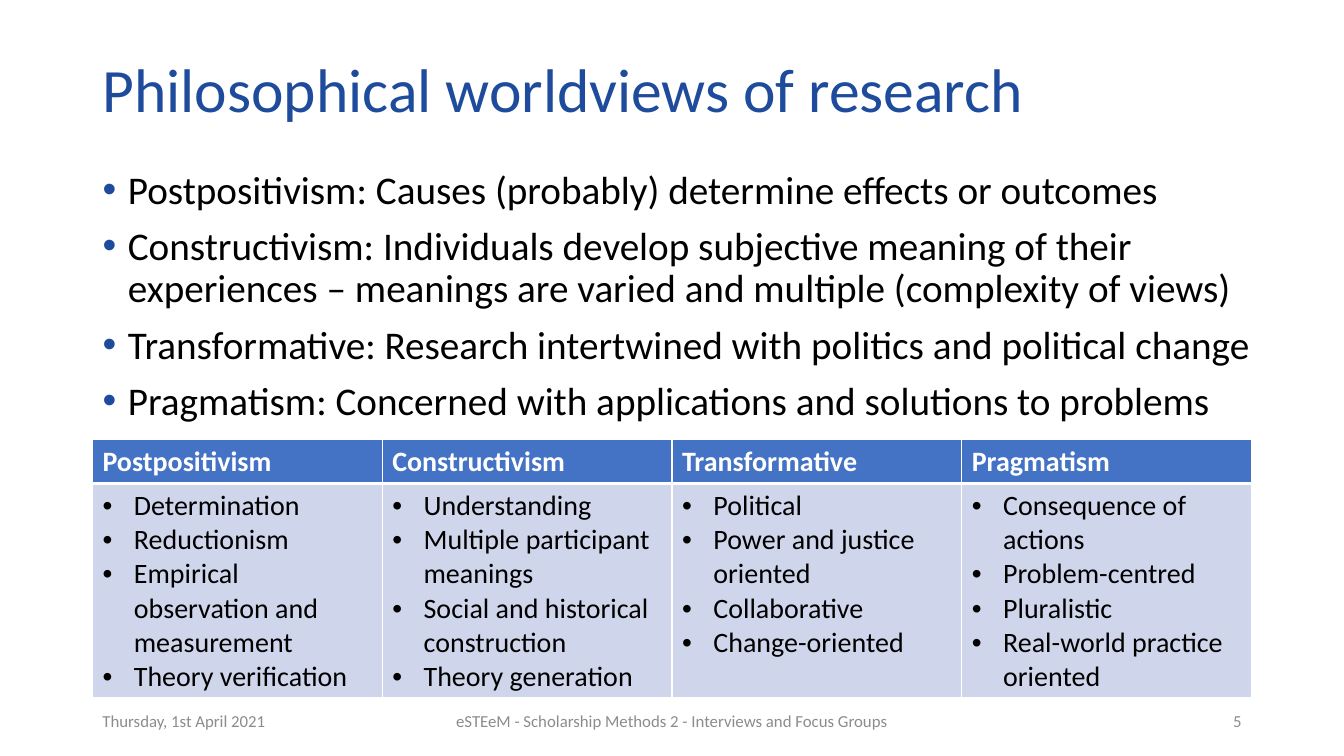
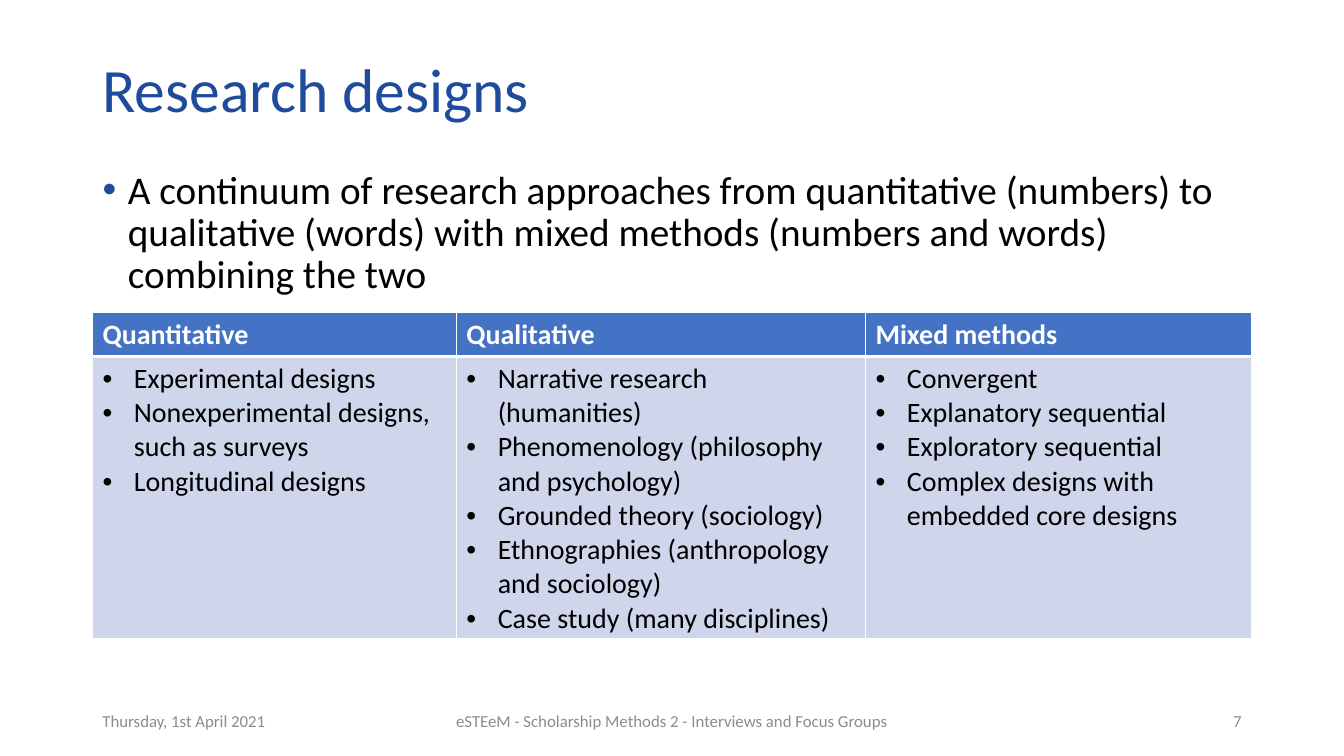
import lxml.etree
import pptx
import pptx.dml.color
import pptx.enum.text
import pptx.oxml.ns
import pptx.util

Cm, Pt = pptx.util.Cm, pptx.util.Pt
Align = pptx.enum.text.PP_ALIGN
Anchor = pptx.enum.text.MSO_ANCHOR
qn = pptx.oxml.ns.qn

FONT = "Calibri"
HUES = {
    "title": "1E4B9B",
    "text": "000000",
    "foot": "8C8C8C",
    "head": "4472C4",
    "cell": "CFD5EA",
    "white": "FFFFFF",
}
LEFT, WIDTH = 2.33, 29.21
DATE = "Thursday, 1st April 2021"
EVENT = "eSTEeM - Scholarship Methods 2 - Interviews and Focus Groups"

VIEWS = [
    "Postpositivism: Causes (probably) determine effects or outcomes",
    "Constructivism: Individuals develop subjective meaning of their "
    "experiences – meanings are varied and multiple (complexity of views)",
    "Transformative: Research intertwined with politics and political change",
    "Pragmatism: Concerned with applications and solutions to problems",
]
TRAITS = {
    "Postpositivism": [
        "Determination",
        "Reductionism",
        "Empirical observation and measurement",
        "Theory verification",
    ],
    "Constructivism": [
        "Understanding",
        "Multiple participant meanings",
        "Social and historical construction",
        "Theory generation",
    ],
    "Transformative": [
        "Political",
        "Power and justice oriented",
        "Collaborative",
        "Change-oriented",
    ],
    "Pragmatism": [
        "Consequence of actions",
        "Problem-centred",
        "Pluralistic",
        "Real-world practice oriented",
    ],
}
RANGE = [
    "A continuum of research approaches from quantitative (numbers) to "
    "qualitative (words) with mixed methods (numbers and words) "
    "combining the two",
]
PLANS = {
    "Quantitative": [
        "Experimental designs",
        "Nonexperimental designs, such as surveys",
        "Longitudinal designs",
    ],
    "Qualitative": [
        "Narrative research (humanities)",
        "Phenomenology (philosophy and psychology)",
        "Grounded theory (sociology)",
        "Ethnographies (anthropology and sociology)",
        "Case study (many disciplines)",
    ],
    "Mixed methods": [
        "Convergent",
        "Explanatory sequential",
        "Exploratory sequential",
        "Complex designs with embedded core designs",
    ],
}


def tint(name):
    """Return the named colour."""
    return pptx.dml.color.RGBColor.from_string(HUES[name])


def style(frame, size, hue, bold=False):
    """Format every run of a text frame."""
    for para in frame.paragraphs:
        for run in para.runs:
            font = run.font
            font.name, font.size, font.bold = FONT, Pt(size), bold
            font.color.rgb = tint(hue)


def place(shape, left, top, width, height):
    """Move and size a shape in centimetres."""
    shape.left, shape.top = Cm(left), Cm(top)
    shape.width, shape.height = Cm(width), Cm(height)


def bullet(para, indent, hue):
    """Give a paragraph a hanging round bullet."""
    props = para._p.get_or_add_pPr()
    props.set("marL", str(Cm(indent)))
    props.set("indent", str(-Cm(indent)))
    shade = lxml.etree.SubElement(props, qn("a:buClr"))
    lxml.etree.SubElement(shade, qn("a:srgbClr"), val=HUES[hue])
    lxml.etree.SubElement(props, qn("a:buFont"), typeface="Arial")
    lxml.etree.SubElement(props, qn("a:buChar"), char="•")


def fill_list(frame, items, indent, hue):
    """Write items as bulleted paragraphs."""
    frame.text = "\n".join(items)
    for para in frame.paragraphs:
        bullet(para, indent, hue)


def add_title(slide, text):
    """Fill the title placeholder."""
    title = slide.shapes.title
    place(title, LEFT, 1.01, WIDTH, 2.65)
    frame = title.text_frame
    frame.text = text
    frame.vertical_anchor = Anchor.MIDDLE
    frame.auto_size = pptx.enum.text.MSO_AUTO_SIZE.NONE
    para = frame.paragraphs[0]
    para.alignment, para.line_spacing = Align.LEFT, 0.9
    style(frame, 44, "title")


def add_body(slide, items, width, height):
    """Fill the body placeholder with a list."""
    body = slide.placeholders[1]
    place(body, LEFT, 4.16, width, height)
    frame = body.text_frame
    fill_list(frame, items, 0.64, "title")
    frame.auto_size = pptx.enum.text.MSO_AUTO_SIZE.NONE
    for index, para in enumerate(frame.paragraphs):
        para.line_spacing = 0.9
        para.space_before = Pt(10 if index else 0)
    style(frame, 28, "text")


def add_foot(slide, page):
    """Add the date, event and page number."""
    parts = [
        (DATE, LEFT, 7.62, Align.LEFT),
        (EVENT, 11.22, 11.43, Align.CENTER),
        (str(page), 23.92, 7.62, Align.RIGHT),
    ]
    for text, left, width, align in parts:
        box = slide.shapes.add_textbox(Cm(left), Cm(17.66), Cm(width), Cm(1.01))
        frame = box.text_frame
        frame.word_wrap = True
        frame.vertical_anchor = Anchor.MIDDLE
        frame.text = text
        frame.paragraphs[0].alignment = align
        style(frame, 12, "foot")


def paint(cell, hue, top, base):
    """Set white borders and the fill of a cell."""
    props = cell._tc.get_or_add_tcPr()
    for side, size in zip("LRTB", (1, 1, top, base)):
        line = lxml.etree.SubElement(props, qn(f"a:ln{side}"), w=str(Pt(size)))
        solid = lxml.etree.SubElement(line, qn("a:solidFill"))
        lxml.etree.SubElement(solid, qn("a:srgbClr"), val=HUES["white"])
    cell.fill.solid()
    cell.fill.fore_color.rgb = tint(hue)


def add_grid(slide, data, top, widths, height):
    """Add a table of headed bullet lists."""
    frame = slide.shapes.add_table(
        2, len(data), Cm(LEFT), Cm(top), Cm(WIDTH), Cm(1.1 + height)
    )
    grid = frame.table
    grid.rows[0].height, grid.rows[1].height = Cm(1.1), Cm(height)
    for index, (name, items) in enumerate(data.items()):
        grid.columns[index].width = Cm(widths[index])
        head, cell = grid.cell(0, index), grid.cell(1, index)
        paint(head, "head", 1, 3)
        head.text_frame.text = name
        style(head.text_frame, 20, "white", True)
        paint(cell, "cell", 3, 1)
        fill_list(cell.text_frame, items, 0.79, "text")
        style(cell.text_frame, 20, "text")


def add_page(deck, title, page):
    """Add a slide with title and footer."""
    slide = deck.slides.add_slide(deck.slide_layouts[1])
    add_title(slide, title)
    add_foot(slide, page)
    return slide


def main():
    """Build and save the deck."""
    deck = pptx.Presentation()
    deck.slide_width, deck.slide_height = Cm(33.87), Cm(19.05)

    slide = add_page(deck, "Philosophical worldviews of research", 5)
    add_body(slide, VIEWS, 30.05, 7.14)
    add_grid(slide, TRAITS, 11.08, [WIDTH / 4] * 4, 5.4)

    slide = add_page(deck, "Research designs", 7)
    add_body(slide, RANGE, WIDTH, 13)
    add_grid(slide, PLANS, 7.88, [9.17, 10.31, 9.73], 7.1)

    deck.save("out.pptx")


if __name__ == "__main__":
    main()
